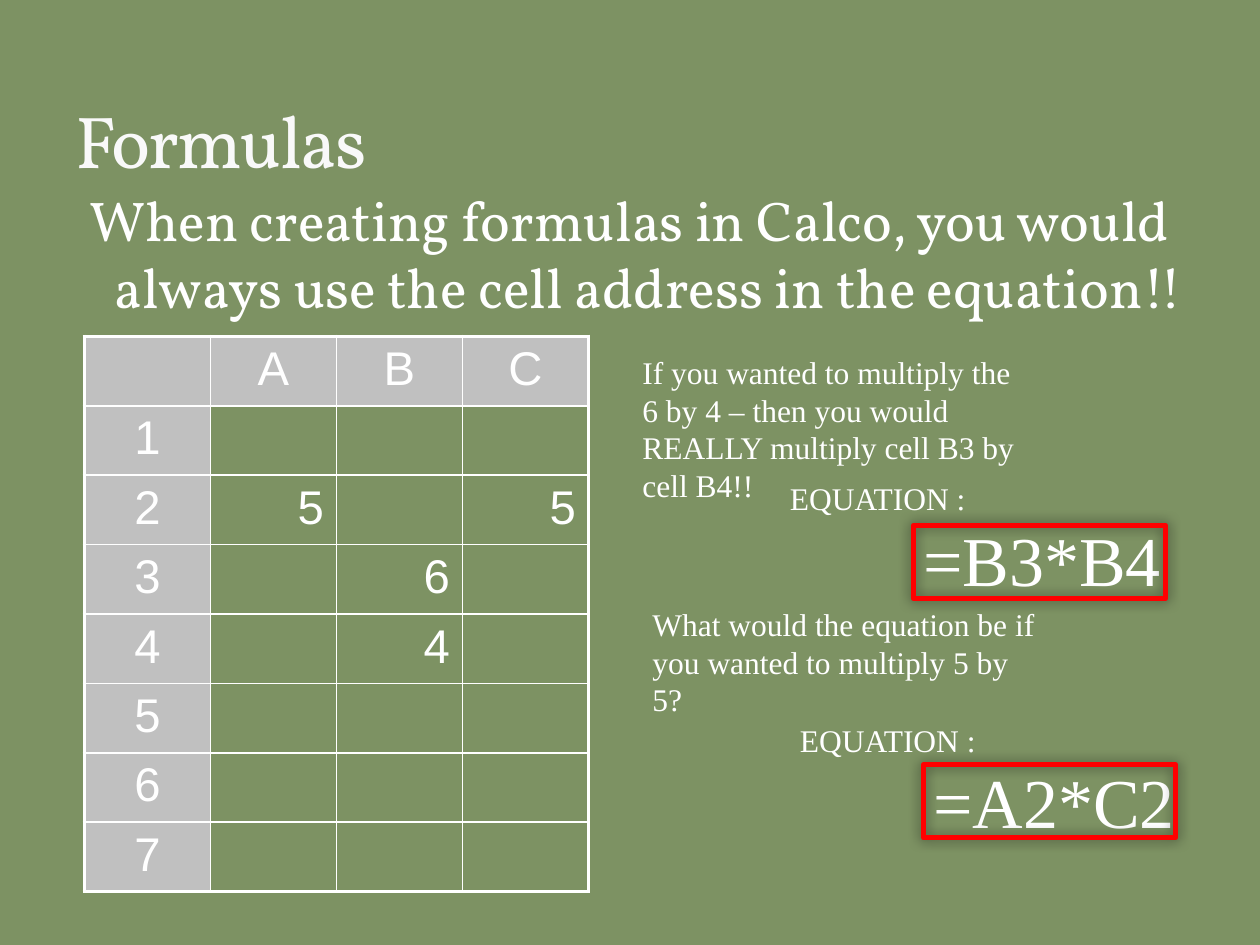
from lxml import etree
from pptx import Presentation
from pptx.dml.color import RGBColor
from pptx.enum.shapes import MSO_SHAPE
from pptx.enum.text import MSO_ANCHOR, MSO_AUTO_SIZE, PP_ALIGN
from pptx.oxml.ns import qn
from pptx.util import Inches, Pt

RECT = MSO_SHAPE.RECTANGLE
TOP, BOTTOM = MSO_ANCHOR.TOP, MSO_ANCHOR.BOTTOM
LEFT, CENTER, RIGHT = PP_ALIGN.LEFT, PP_ALIGN.CENTER, PP_ALIGN.RIGHT
GROW = MSO_AUTO_SIZE.SHAPE_TO_FIT_TEXT

WHITE, HEADER_GRAY, RED, GREEN = "FFFFFF", "C0C0C0", "FF0000", "7D9263"
THIN, THICK = 1, 2.25


def rgb(value):
    return RGBColor.from_string(value)


def add_xml(parent, tag, **attrs):
    return etree.SubElement(parent, qn(tag), attrs)


class SlideBuilder:
    serif, display, sans = "Times New Roman", "Vollkorn", "Arial"

    def __init__(self, slide):
        self.s = slide
        fill = slide.background.fill
        fill.solid()
        fill.fore_color.rgb = rgb(GREEN)

    def style(self, p, size, name, color=WHITE, align=LEFT):
        p.alignment = align
        p.font.size, p.font.name = Pt(size), name
        p.font.color.rgb = rgb(color)

    def indent(self, p, left, first=0):
        pPr = p._p.get_or_add_pPr()
        pPr.set("marL", str(Inches(left)))
        pPr.set("indent", str(Inches(first)))

    def text(self, box, lines, name=serif, color=WHITE, align=LEFT, anchor=TOP, grow=True):
        """Add a text box; lines is a list of (text, size) pairs."""
        tf = self.s.shapes.add_textbox(*map(Inches, box)).text_frame
        tf.word_wrap = True
        tf.vertical_anchor = anchor
        if grow:
            tf.auto_size = GROW
        for i, (text, size) in enumerate(lines):
            p = tf.add_paragraph() if i else tf.paragraphs[0]
            p.add_run().text = text
            self.style(p, size, name, color, align)
        return tf.paragraphs

    def equation(self, left, top, formula):
        ps = self.text((left, top, 3.25, 1.08), [("EQUATION :", 18), (formula, 40)])
        self.indent(ps[1], 1.06)

    def frame(self, left, top):
        sp = self.s.shapes.add_shape(RECT, Inches(left), Inches(top), Inches(2), Inches(0.58))
        sp.fill.background()
        sp.line.color.rgb = rgb(RED)
        sp.line.width = Pt(3)
        sp.shadow.inherit = False
        spPr = sp._element.spPr
        add_xml(spPr.find(qn("a:ln")), "a:round")
        shadow = add_xml(spPr.find(qn("a:effectLst")), "a:outerShdw",
                         blurRad=str(Pt(7.5)), dist="0", dir="0")
        add_xml(add_xml(shadow, "a:srgbClr", val="000000"), "a:alpha", val="50000")

    def borders(self, cell, widths):
        tcPr = cell._tc.get_or_add_tcPr()
        for i, (side, width) in enumerate(zip("LRTB", widths)):
            ln = add_xml(tcPr, f"a:ln{side}", w=str(Pt(width)))
            add_xml(add_xml(ln, "a:solidFill"), "a:srgbClr", val=WHITE)
            tcPr.insert(i, ln)

    def sheet(self, left, top, columns, row_count, values, col_w, row_h):
        """Add a spreadsheet grid; values maps addresses such as B3 to text."""
        rows, cols = row_count + 1, len(columns) + 1
        table = self.s.shapes.add_table(rows, cols, Inches(left), Inches(top),
                                        Inches(col_w * cols), Inches(row_h * rows)).table
        table.first_row = table.horz_banding = False
        for r in range(rows):
            for c in range(cols):
                cell = table.cell(r, c)
                header = r == 0 or c == 0
                column = columns[c - 1] if c else ""
                label = f"{column}{r or ''}"
                text = label if header else values.get(label, "")
                if header:
                    cell.fill.solid()
                    cell.fill.fore_color.rgb = rgb(HEADER_GRAY)
                else:
                    cell.fill.background()
                if text:
                    cell.text = text
                    self.style(cell.text_frame.paragraphs[0], 27, self.sans,
                               align=CENTER if header else RIGHT)
                outer = (c == 0, c == cols - 1, r == 0, r == rows - 1)
                self.borders(cell, [THICK if edge else THIN for edge in outer])


def main():
    prs = Presentation()
    prs.slide_width, prs.slide_height = Inches(10), Inches(7.5)
    b = SlideBuilder(prs.slides.add_slide(prs.slide_layouts[6]))

    # Introduction and title
    intro = b.text((0.5, 1.42, 9, 5.25),
                   [("When creating formulas in Calco, you would always use "
                     "the cell address in the equation!!", 32)],
                   b.display, align=CENTER, grow=False)[0]
    intro.space_before = Pt(6)
    b.indent(intro, 0.3, -0.3)
    title = b.text((0.5, 0.17, 9, 1.33), [("Formulas", 42)], b.display, "F9F9F9",
                   anchor=BOTTOM, grow=False)[0]
    title.runs[0]._r.get_or_add_rPr().set("spc", "-100")

    # Spreadsheet
    b.sheet(0.67, 2.67, "ABC", 7, {"A2": "5", "C2": "5", "B3": "6", "B4": "4"}, 1, 0.52)

    # Worked example and question
    b.text((5, 2.75, 3.25, 1.31),
           [("If you wanted to multiply the 6 by 4 – then you would "
             "REALLY multiply cell B3 by cell B4!!", 18)])
    b.equation(6.17, 3.75, "=B3*B4")
    b.text((5.08, 4.75, 3.25, 0.71),
           [("What would the equation be if you wanted to multiply 5 by 5?", 18)])
    b.equation(6.25, 5.67, "=A2*C2")

    # Frames around the equations
    b.frame(7.25, 4.17)
    b.frame(7.33, 6.07)

    prs.save("out.pptx")


if __name__ == "__main__":
    main()
